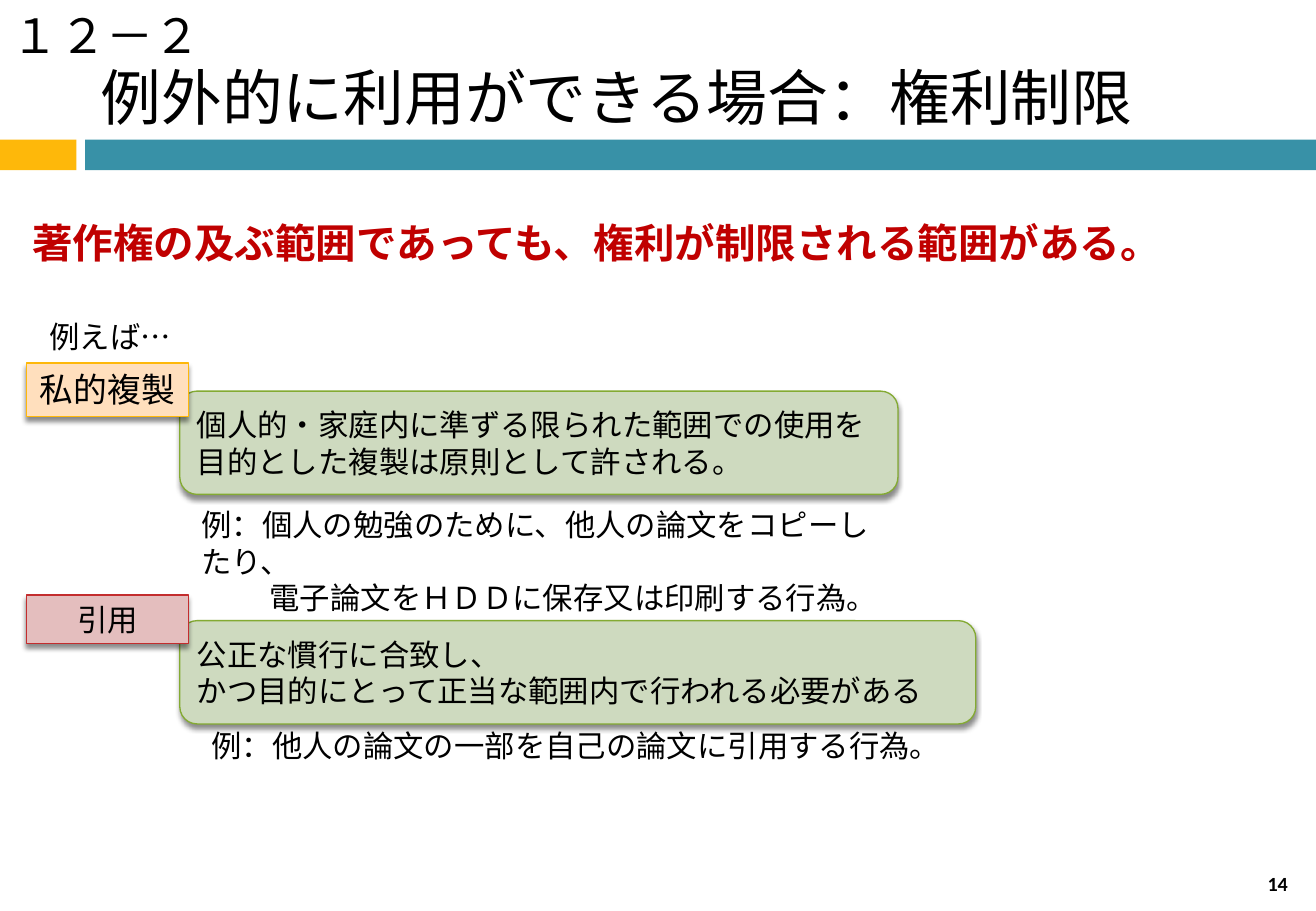
from lxml import etree
from pptx import Presentation
from pptx.dml.color import RGBColor
from pptx.enum.shapes import MSO_SHAPE
from pptx.enum.text import MSO_ANCHOR, PP_ALIGN
from pptx.oxml.ns import qn
from pptx.util import Inches, Pt

RECT, ROUNDED = MSO_SHAPE.RECTANGLE, MSO_SHAPE.ROUNDED_RECTANGLE
TOP, MIDDLE = MSO_ANCHOR.TOP, MSO_ANCHOR.MIDDLE
LEFT, CENTER = PP_ALIGN.LEFT, PP_ALIGN.CENTER
GOTHIC, CALIBRI, ARIAL = "Noto Sans CJK JP", "Calibri", "Arial"
BLACK, CRIMSON = "000000", "C00000"
GOLD, TEAL, GREEN, RED = "FEB80A", "3891A7", "84AA33", "C32D2E"
PALE_GOLD, PALE_GREEN, PALE_RED = "FFDFBD", "CEDABF", "E4BEBE"


def rgb(color):
    return RGBColor.from_string(color)


class SlideBuilder:
    def __init__(self, slide):
        self.slide = slide

    def add_lines(self, shape, lines, size, font=GOTHIC, color=BLACK, bold=False,
                  align=LEFT, anchor=TOP, hanging=0):
        """Fill a shape with paragraphs; those after the first are indented by hanging."""
        frame = shape.text_frame
        frame.word_wrap = True
        frame.vertical_anchor = anchor
        for number, line in enumerate(lines):
            paragraph = frame.add_paragraph() if number else frame.paragraphs[0]
            paragraph.alignment = align
            if number and hanging:
                paragraph._p.get_or_add_pPr().set("marL", str(Inches(hanging)))
            run = paragraph.add_run()
            run.text = line
            run.font.size = Pt(size)
            run.font.name = font
            run.font.bold = bold
            run.font.color.rgb = rgb(color)
            east_asian = etree.SubElement(run._r.get_or_add_rPr(), qn("a:ea"))
            east_asian.set("typeface", GOTHIC)

    def text(self, box, lines, size, **style):
        shape = self.slide.shapes.add_textbox(*map(Inches, box))
        self.add_lines(shape, lines, size, **style)

    def panel(self, box, fill, kind=RECT, line=None):
        shape = self.slide.shapes.add_shape(kind, *map(Inches, box))
        shape.shadow.inherit = False
        shape.fill.solid()
        shape.fill.fore_color.rgb = rgb(fill)
        if line:
            shape.line.color.rgb = rgb(line)
            shape.line.width = Pt(0.79)
            self.drop_shadow(shape)
        else:
            shape.line.fill.background()
        return shape

    def drop_shadow(self, shape):
        effects = shape._element.spPr.find(qn("a:effectLst"))
        shadow = etree.SubElement(effects, qn("a:outerShdw"), blurRad=str(Pt(3)),
                                  dist=str(Pt(2.4)), dir="5400000", rotWithShape="0")
        tint = etree.SubElement(shadow, qn("a:srgbClr"), val=BLACK)
        etree.SubElement(tint, qn("a:alpha"), val="45000")

    def rule(self, box, lines):
        panel = self.panel(box, PALE_GREEN, ROUNDED, GREEN)
        self.add_lines(panel, lines, 18, font=CALIBRI, anchor=MIDDLE)

    def tag(self, box, name, size, fill, line):
        self.add_lines(self.panel(box, fill, line=line), [name], size, align=CENTER)


def main():
    prs = Presentation()
    prs.slide_width, prs.slide_height = Inches(10.83), Inches(7.5)
    builder = SlideBuilder(prs.slides.add_slide(prs.slide_layouts[6]))

    # Band under the title
    builder.panel((0, 1.15, 0.63, 0.25), GOLD)
    builder.panel((0.7, 1.15, 10.13, 0.25), TEAL)

    # Section number and title
    builder.text((0, 0, 2.11, 0.57), ["１２－２"], 28)
    builder.text((0.73, 0.25, 9.66, 1.08), ["例外的に利用ができる場合：権利制限"], 36,
                 anchor=MIDDLE)

    # Key message
    message = builder.panel((0.13, 1.6, 9.38, 0.79), "FFFFFF", ROUNDED)
    builder.add_lines(message, ["著作権の及ぶ範囲であっても、権利が制限される範囲がある。"], 24,
                      font=CALIBRI, color=CRIMSON, bold=True, anchor=MIDDLE)
    builder.text((0.31, 2.57, 3.54, 0.4), ["例えば…"], 18, font=ARIAL)

    # Private copying
    builder.rule((1.48, 3.22, 5.91, 0.85),
                 ["個人的・家庭内に準ずる限られた範囲での使用を",
                  "目的とした複製は原則として許される。"])
    builder.text((1.56, 4.12, 5.9, 0.71),
                 ["例：個人の勉強のために、他人の論文をコピーしたり、",
                  "電子論文をＨＤＤに保存又は印刷する行為。"], 18, hanging=0.56)
    builder.tag((0.22, 2.99, 1.33, 0.44), "私的複製", 20, PALE_GOLD, GOLD)

    # Quotation
    builder.rule((1.48, 5.11, 6.55, 0.85),
                 ["公正な慣行に合致し、",
                  "かつ目的にとって正当な範囲内で行われる必要がある"])
    builder.text((1.64, 5.94, 6.12, 0.4),
                 ["例：他人の論文の一部を自己の論文に引用する行為。"], 18, font=CALIBRI)
    builder.tag((0.22, 4.9, 1.33, 0.4), "引用", 18, PALE_RED, RED)

    # Page number
    builder.text((10.2, 7.14, 0.63, 0.27), ["14"], 11.9, font=CALIBRI, bold=True,
                 align=CENTER, anchor=MIDDLE)

    prs.save("out.pptx")


if __name__ == "__main__":
    main()
